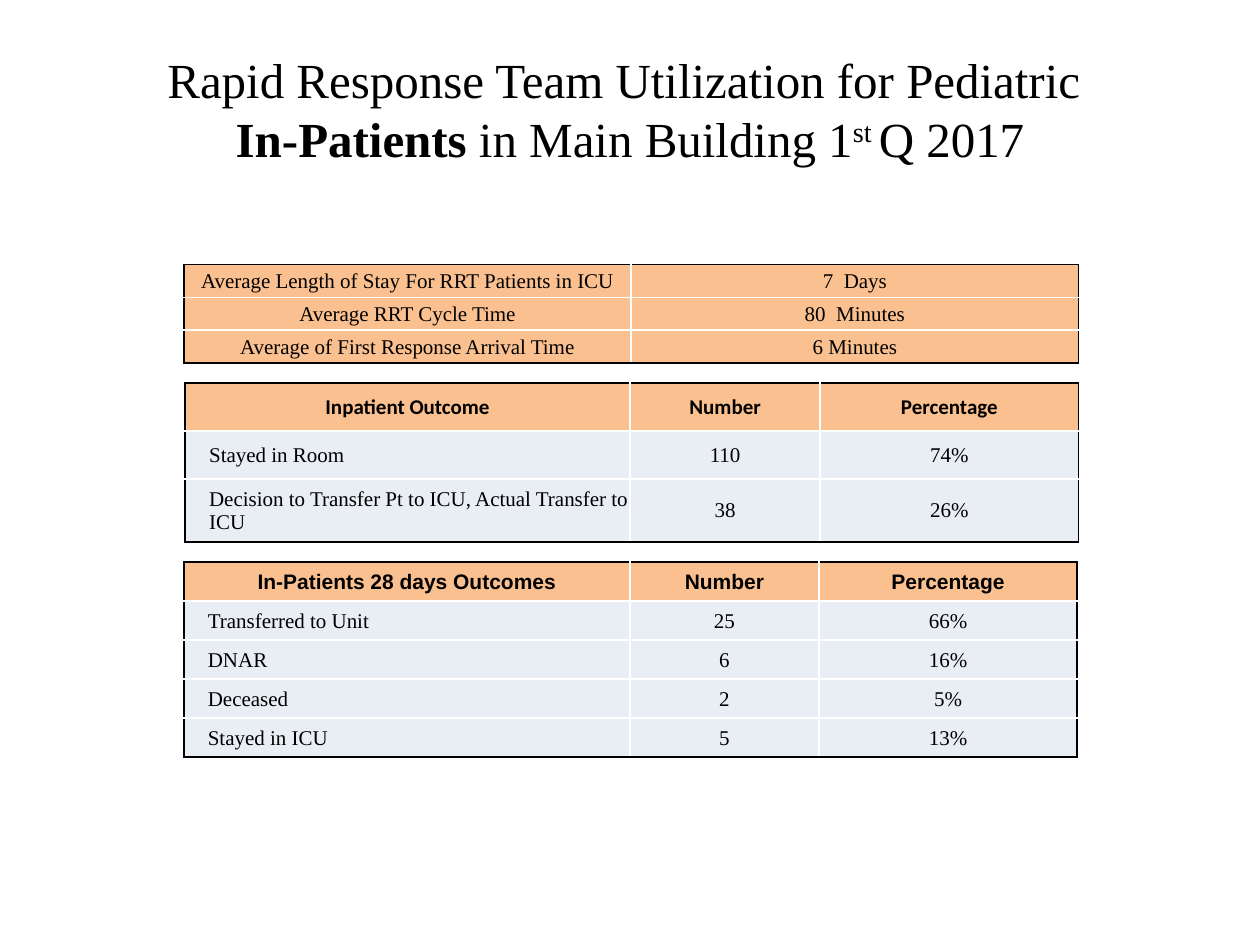
import pptx
import pptx.dml.color
import pptx.enum.text
import pptx.oxml.ns
import pptx.util
from lxml import etree

Inches = pptx.util.Inches
Align = pptx.enum.text.PP_ALIGN
Middle = pptx.enum.text.MSO_ANCHOR.MIDDLE

SERIF = "Times New Roman"
BLACK, WHITE = "000000", "FFFFFF"
ORANGE, PALE = "FAC090", "E9EDF4"


def color(code):
    return pptx.dml.color.RGBColor.from_string(code)


def write(para, text, size=12, font=SERIF, bold=False, raised=False):
    run = para.add_run()
    run.text = text
    run.font.size = pptx.util.Pt(size)
    run.font.name = font
    run.font.bold = bold
    run.font.color.rgb = color(BLACK)
    if raised:
        run.font._element.set("baseline", "30000")


def add_title(slide, left, top, width, height):
    frame = slide.shapes.add_textbox(left, top, width, height).text_frame
    frame.word_wrap = True
    frame.vertical_anchor = Middle
    para = frame.paragraphs[0]
    para.alignment = Align.CENTER
    write(para, "Rapid Response Team Utilization for Pediatric ", size=28)
    para.add_line_break()
    write(para, "In-Patients ", size=28, bold=True)
    write(para, "in Main Building 1", size=28)
    write(para, "st ", size=28, raised=True)
    write(para, "Q 2017", size=28)


def add_edge(cell, side, code):
    props = cell._tc.get_or_add_tcPr()
    line = etree.SubElement(props, pptx.oxml.ns.qn("a:ln" + side), w="12700")
    fill = etree.SubElement(line, pptx.oxml.ns.qn("a:solidFill"))
    etree.SubElement(fill, pptx.oxml.ns.qn("a:srgbClr"), val=code)


def fill_cell(cell, text, fill, outer, indent=False, **style):
    """Format one cell; outer holds the sides (L, R, T, B) on the table's rim."""
    for side in "LRTB":
        add_edge(cell, side, BLACK if side in outer else WHITE)
    cell.fill.solid()
    cell.fill.fore_color.rgb = color(fill)
    cell.margin_left = cell.margin_right = cell.margin_top = Inches(0.01)
    cell.margin_bottom = 0
    cell.vertical_anchor = Middle
    para = cell.text_frame.paragraphs[0]
    para.alignment = Align.LEFT if indent else Align.CENTER
    if indent:
        para._p.get_or_add_pPr().set("marL", str(Inches(0.18)))
    write(para, text, **style)


def add_grid(slide, left, top, widths, heights, rows, head=None):
    """Place a table; head names the font of its header row, if it has one."""
    count, span = len(rows), len(widths)
    table = slide.shapes.add_table(
        count, span, left, top, Inches(sum(widths)), Inches(sum(heights))
    ).table
    table.first_row = table.horz_banding = False
    for col, width in zip(table.columns, widths):
        col.width = Inches(width)
    for r, (row, height) in enumerate(zip(rows, heights)):
        table.rows[r].height = Inches(height)
        body = head is not None and r > 0
        style = {"font": head, "bold": True} if head and r == 0 else {}
        for c, text in enumerate(row):
            rim = {"L": c == 0, "R": c == span - 1, "T": r == 0, "B": r == count - 1}
            fill_cell(
                table.cell(r, c), text, PALE if body else ORANGE,
                [side for side in rim if rim[side]],
                indent=body and c == 0, **style,
            )


def main():
    deck = pptx.Presentation()
    deck.slide_width, deck.slide_height = Inches(10), Inches(7.5)
    slide = deck.slides.add_slide(deck.slide_layouts[6])

    add_title(slide, Inches(0.5), Inches(0.34), Inches(9), Inches(1.04))
    add_grid(slide, Inches(1.46), Inches(2.1), [3.55, 3.55], [0.26] * 3, [
        ("Average Length of Stay For RRT Patients in ICU", "7  Days"),
        ("Average RRT Cycle Time", "80  Minutes"),
        ("Average of First Response Arrival Time", "6 Minutes"),
    ])
    add_grid(slide, Inches(1.47), Inches(3.04), [3.53, 1.51, 2.05], [0.38, 0.38, 0.5], [
        ("Inpatient Outcome", "Number", "Percentage"),
        ("Stayed in Room", "110", "74%"),
        ("Decision to Transfer Pt to ICU, Actual Transfer to ICU", "38", "26%"),
    ], head="Calibri")
    add_grid(slide, Inches(1.46), Inches(4.46), [3.54, 1.5, 2.05], [0.31] * 5, [
        ("In-Patients 28 days Outcomes", "Number", "Percentage"),
        ("Transferred to Unit", "25", "66%"),
        ("DNAR", "6", "16%"),
        ("Deceased", "2", "5%"),
        ("Stayed in ICU", "5", "13%"),
    ], head="Arial")
    deck.save("out.pptx")


if __name__ == "__main__":
    main()
